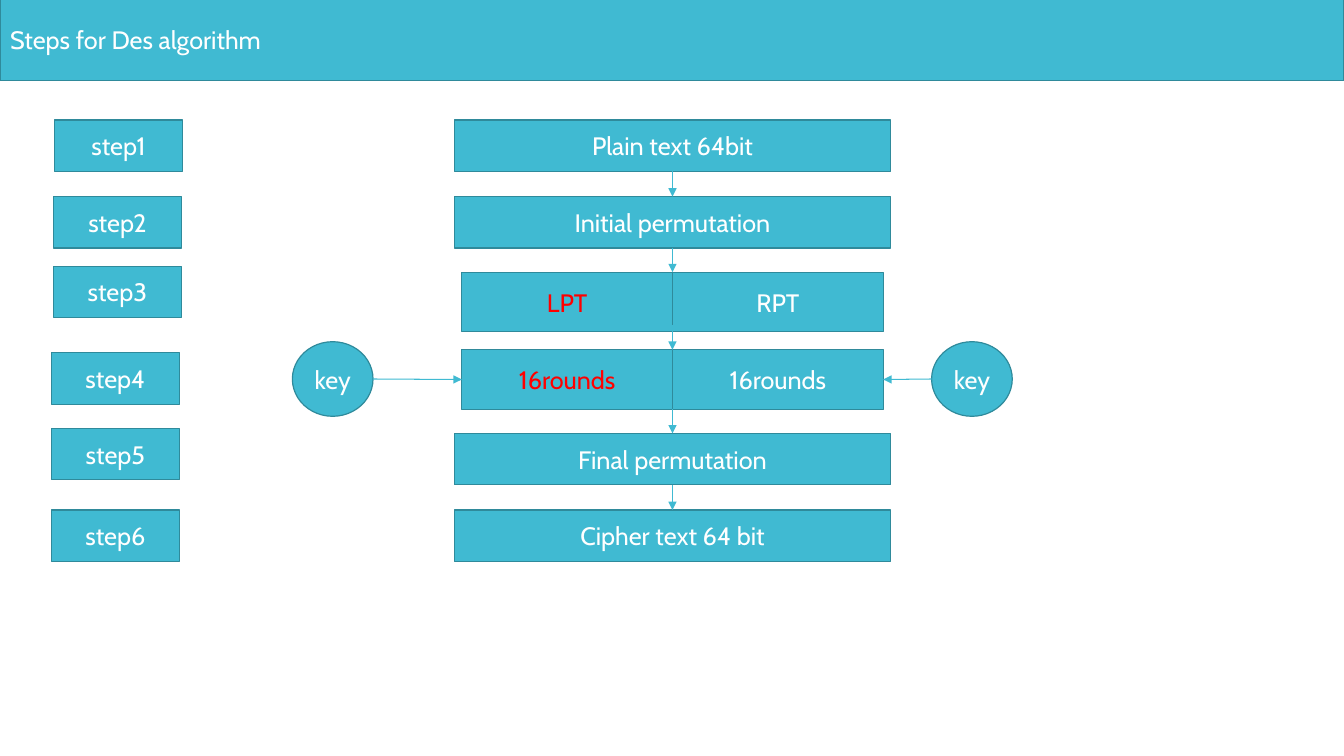
from dataclasses import dataclass

from pptx import Presentation
from pptx import util as u
from pptx.dml.color import RGBColor
from pptx.enum import shapes, text
from pptx.oxml.ns import qn
from lxml import etree

TOP, LEFT, BOTTOM, RIGHT = range(4)
RECT, OVAL = shapes.MSO_SHAPE.RECTANGLE, shapes.MSO_SHAPE.OVAL


@dataclass(frozen=True)
class Theme:
    font: str = "Cabin"
    size: float = 18
    fill: str = "40BAD2"
    edge: str = "2F8A9B"
    light: str = "FFFFFF"
    accent: str = "FF0000"
    edge_width: float = 0.85
    arrow_width: float = 0.75


class Diagram:
    def __init__(self, slide, theme):
        self.s = slide
        self.theme = theme

    def style(self, sp, label, color, align):
        sp.fill.solid()
        sp.fill.fore_color.rgb = RGBColor.from_string(self.theme.fill)
        sp.line.color.rgb = RGBColor.from_string(self.theme.edge)
        sp.line.width = u.Pt(self.theme.edge_width)
        tf = sp.text_frame
        tf.text = label
        tf.word_wrap = True
        tf.auto_size = text.MSO_AUTO_SIZE.NONE
        tf.vertical_anchor = text.MSO_ANCHOR.MIDDLE
        p = tf.paragraphs[0]
        p.alignment = align
        p.font.name = self.theme.font
        p.font.size = u.Pt(self.theme.size)
        p.font.color.rgb = RGBColor.from_string(color)

    def title(self, label, x, y, w, h):
        sp = self.s.shapes.title
        sp.left, sp.top, sp.width, sp.height = map(u.Inches, (x, y, w, h))
        self.style(sp, label, self.theme.light, text.PP_ALIGN.LEFT)

    def box(self, label, x, y, w, h, kind=RECT, color=None, parent=None):
        sp = (parent or self.s).shapes.add_shape(kind, *map(u.Inches, (x, y, w, h)))
        sp.shadow.inherit = False
        self.style(sp, label, color or self.theme.light, text.PP_ALIGN.CENTER)
        return sp

    def arrow(self, x1, y1, x2, y2, begin=None, end=None):
        cx = self.s.shapes.add_connector(
            shapes.MSO_CONNECTOR.STRAIGHT, *map(u.Inches, (x1, y1, x2, y2)))
        if begin:
            cx.begin_connect(*begin)
        if end:
            cx.end_connect(*end)
        cx.line.color.rgb = RGBColor.from_string(self.theme.fill)
        cx.line.width = u.Pt(self.theme.arrow_width)
        etree.SubElement(cx.line._get_or_add_ln(), qn("a:tailEnd"), type="triangle")
        etree.SubElement(cx._element.spPr, qn("a:effectLst"))


def main():
    prs = Presentation()
    prs.slide_width, prs.slide_height = u.Inches(13.33), u.Inches(7.5)
    theme = Theme()
    d = Diagram(prs.slides.add_slide(prs.slide_layouts[5]), theme)
    d.title("Steps for Des algorithm", 0, -0.02, 13.33, 0.82)

    center, stage_w, stage_h = 6.67, 4.33, 0.51
    stages = [("Plain text 64bit", 1.19), ("Initial permutation", 1.95),
              ("Final permutation", 4.3), ("Cipher text 64 bit", 5.06)]
    plain, initial, final, cipher = [
        d.box(label, center - stage_w / 2, y, stage_w, stage_h) for label, y in stages]

    half_w, half_h = 2.09, 0.59
    halves = []
    for left_label, right_label, y in [("LPT", "RPT", 2.7), ("16rounds", "16rounds", 3.47)]:
        halves.append((
            d.box(left_label, center - half_w, y, half_w, half_h, color=theme.accent),
            d.box(right_label, center, y, half_w, half_h)))
    left_rounds, right_rounds = halves[-1]

    for y1, y2, begin, end in [
            (1.7, 1.95, (plain, BOTTOM), (initial, TOP)),
            (2.46, 2.7, (initial, BOTTOM), None),
            (3.22, 3.47, None, None),
            (4.06, 4.3, None, (final, TOP)),
            (4.81, 5.06, (final, BOTTOM), (cipher, TOP))]:
        d.arrow(center, y1, center, y2, begin, end)

    key_w, key_h, key_mid = 0.8, 0.74, 3.76
    for key_x, start, stop, target in [
            (2.9, 3.7, center - half_w, (left_rounds, LEFT)),
            (9.24, 9.24, center + half_w, (right_rounds, RIGHT))]:
        d.box("key", key_x, key_mid - key_h / 2, key_w, key_h, kind=OVAL)
        d.arrow(start, key_mid, stop, key_mid, end=target)

    steps = d.s.shapes.add_group_shape()
    positions = [(0.54, 1.19), (0.53, 1.95), (0.53, 2.64),
                 (0.51, 3.5), (0.51, 4.25), (0.51, 5.06)]
    for number, (x, y) in enumerate(positions, 1):
        d.box(f"step{number}", x, y, 1.27, stage_h, parent=steps)

    prs.save("out.pptx")


if __name__ == "__main__":
    main()
